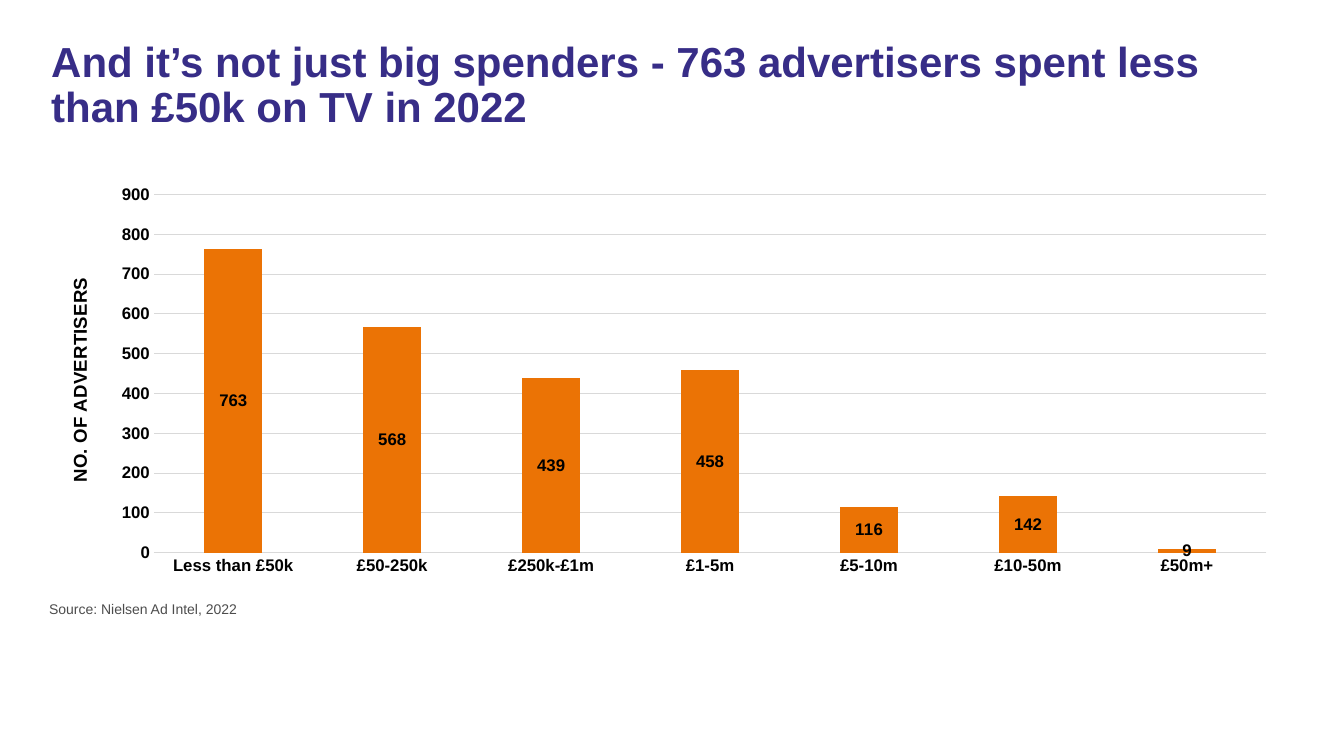
from lxml import etree
from pptx import Presentation
from pptx.chart.data import CategoryChartData
from pptx.dml.color import RGBColor
from pptx.enum.chart import XL_CHART_TYPE, XL_LABEL_POSITION, XL_TICK_MARK
from pptx.oxml.ns import qn
from pptx.util import Pt

FONT = "Arial"
PURPLE = RGBColor(0x37, 0x2D, 0x87)
ORANGE = RGBColor(0xEB, 0x73, 0x05)
GREY = RGBColor(0x4D, 0x4D, 0x4D)
LIGHT_GREY = RGBColor(0xD9, 0xD9, 0xD9)
BLACK = RGBColor(0, 0, 0)

ADVERTISERS_BY_SPEND = {
    "Less than £50k": 763,
    "£50-250k": 568,
    "£250k-£1m": 439,
    "£1-5m": 458,
    "£5-10m": 116,
    "£10-50m": 142,
    "£50m+": 9,
}
# Inner plot area as fractions of the chart frame
PLOT_LAYOUT = {"x": 0.09, "y": 0.04, "w": 0.89, "h": 0.89}


def style_font(font, size, color, bold=False):
    font.name = FONT
    font.size = Pt(size)
    font.bold = bold
    font.color.rgb = color


def add_text(slide, text, left, top, width, height, size, color, bold=False):
    text_frame = slide.shapes.add_textbox(
        Pt(left), Pt(top), Pt(width), Pt(height)).text_frame
    text_frame.word_wrap = True
    text_frame.text = text
    paragraph = text_frame.paragraphs[0]
    style_font(paragraph.runs[0].font, size, color, bold)
    return paragraph


def style_line(line):
    line.color.rgb = LIGHT_GREY
    line.width = Pt(0.75)


def fix_plot_area(chart):
    """Pin the inner plot area to PLOT_LAYOUT."""
    plot_area = chart._chartSpace.chart.plotArea
    layout = plot_area.find(qn("c:layout"))
    if layout is None:
        layout = etree.Element(qn("c:layout"))
        plot_area.insert(0, layout)
    manual = etree.SubElement(layout, qn("c:manualLayout"))
    settings = {"layoutTarget": "inner", "xMode": "edge", "yMode": "edge"}
    for name, value in (settings | PLOT_LAYOUT).items():
        etree.SubElement(manual, qn(f"c:{name}")).set("val", str(value))


def style_axes(chart):
    for axis in (chart.category_axis, chart.value_axis):
        axis.major_tick_mark = XL_TICK_MARK.NONE
        axis.minor_tick_mark = XL_TICK_MARK.NONE
        style_font(axis.tick_labels.font, 12, BLACK, bold=True)
    style_line(chart.category_axis.format.line)

    value_axis = chart.value_axis
    value_axis.minimum_scale = 0
    value_axis.maximum_scale = 900
    value_axis.major_unit = 100
    value_axis.format.line.fill.background()
    style_line(value_axis.major_gridlines.format.line)
    title_frame = value_axis.axis_title.text_frame
    title_frame.text = "NO. OF ADVERTISERS"
    style_font(title_frame.paragraphs[0].runs[0].font, 13.3, BLACK, bold=True)


def add_spend_chart(slide, left, top, width, height):
    chart_data = CategoryChartData()
    chart_data.categories = list(ADVERTISERS_BY_SPEND)
    chart_data.add_series("Series 1", list(ADVERTISERS_BY_SPEND.values()))
    chart = slide.shapes.add_chart(
        XL_CHART_TYPE.COLUMN_CLUSTERED,
        Pt(left), Pt(top), Pt(width), Pt(height), chart_data).chart
    chart.has_legend = False
    chart.has_title = False
    style_font(chart.font, 10, BLACK, bold=True)
    style_axes(chart)
    fix_plot_area(chart)

    plot = chart.plots[0]
    plot.vary_by_categories = False
    plot.gap_width = 172
    plot.overlap = -30
    series = plot.series[0]
    series.format.fill.solid()
    series.format.fill.fore_color.rgb = ORANGE
    labels = series.data_labels
    labels.show_value = True
    labels.position = XL_LABEL_POSITION.CENTER
    style_font(labels.font, 12, BLACK, bold=True)


def main():
    presentation = Presentation()
    presentation.slide_width = Pt(960)
    presentation.slide_height = Pt(540)
    slide = presentation.slides.add_slide(presentation.slide_layouts[6])

    title = add_text(
        slide,
        "And it’s not just big spenders - 763 advertisers spent less than £50k on TV in 2022",
        29.5, 26, 860, 80.5, 30, PURPLE, bold=True)
    title.line_spacing = 0.9
    add_spend_chart(slide, 29.5, 127.5, 893, 287.5)
    add_text(slide, "Source: Nielsen Ad Intel, 2022",
             28, 425.5, 893, 24, 10, GREY)

    presentation.save("out.pptx")


if __name__ == "__main__":
    main()
